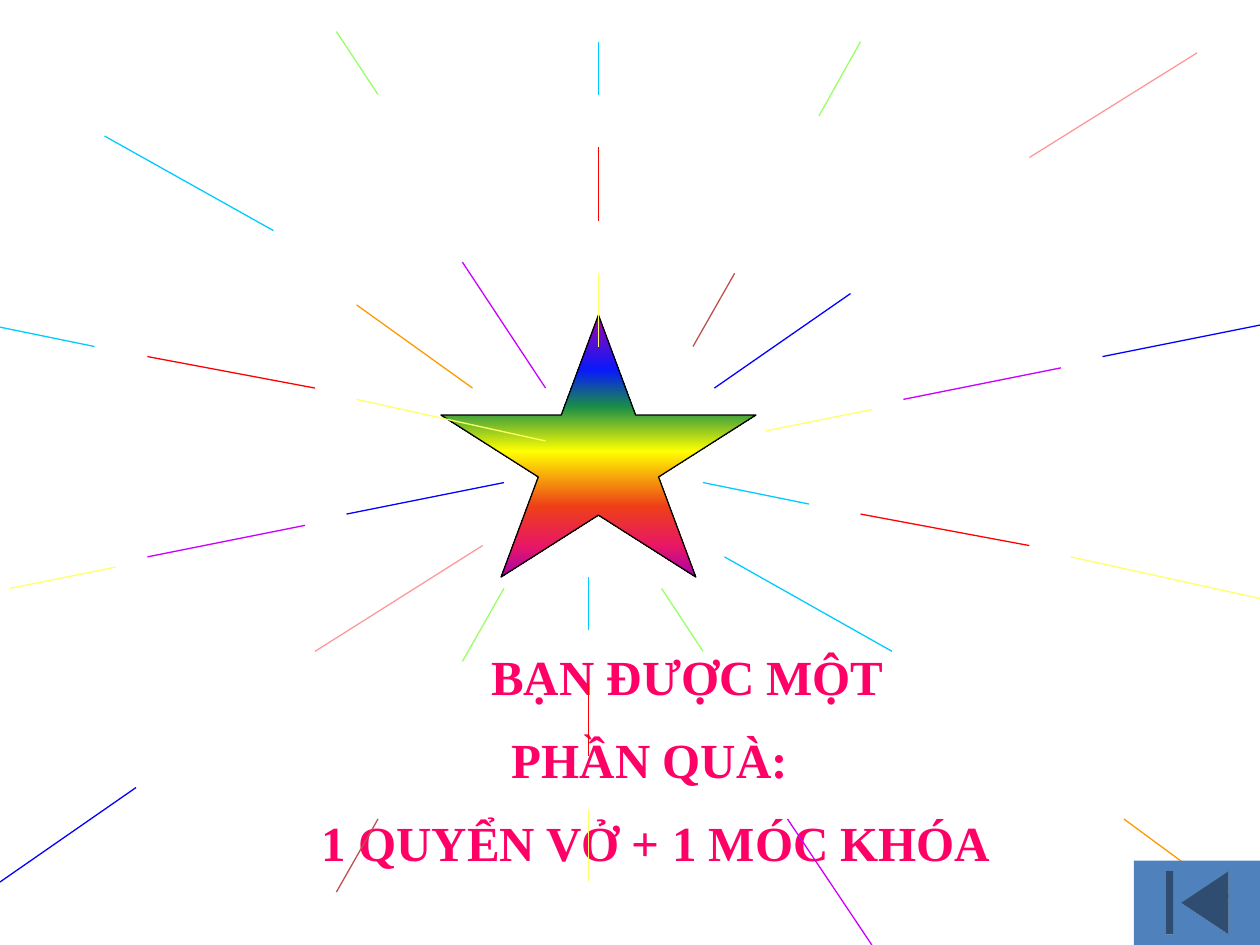
from lxml import etree
from pptx import Presentation
from pptx import util as u
from pptx.dml.color import RGBColor
from pptx.enum import shapes, text
from pptx.oxml import ns

PINK = RGBColor(0xFF, 0x00, 0x66)
BLACK = RGBColor(0x00, 0x00, 0x00)
SKY = RGBColor(0x00, 0xCC, 0xFF)
RED = RGBColor(0xFF, 0x00, 0x00)
YELLOW = RGBColor(0xFF, 0xFF, 0x66)
VIOLET = RGBColor(0xCC, 0x00, 0xFF)
BLUE = RGBColor(0x00, 0x00, 0xFF)
LIME = RGBColor(0x99, 0xFF, 0x66)
BRICK = RGBColor(0xC0, 0x50, 0x4D)
SALMON = RGBColor(0xFF, 0x99, 0x99)
ORANGE = RGBColor(0xFF, 0x99, 0x00)
STEEL = RGBColor(0x4F, 0x81, 0xBD)

RAINBOW = [
    (0, RGBColor(0xA6, 0x03, 0xAB)),
    (21, RGBColor(0x08, 0x19, 0xFB)),
    (35, RGBColor(0x1A, 0x8D, 0x48)),
    (52, RGBColor(0xFF, 0xFF, 0x00)),
    (73, RGBColor(0xEE, 0x3F, 0x17)),
    (88, RGBColor(0xE8, 0x17, 0x66)),
    (100, RGBColor(0xA6, 0x03, 0xAB)),
]

PRIZE_LINES = ["\tBẠN ĐƯỢC MỘT", "PHẦN QUÀ: ", "1 QUYỂN VỞ + 1 MÓC KHÓA"]

RAYS = {
    SKY: [(4.67, 4.58, 4.67, 5), (4.75, 0.33, 4.75, 0.75), (5.58, 3.83, 6.42, 4),
          (-0.08, 2.58, 0.75, 2.75), (5.75, 4.42, 7.08, 5.17), (0.83, 1.08, 2.17, 1.83)],
    RED: [(4.67, 5.42, 4.67, 6), (4.75, 1.17, 4.75, 1.75),
          (6.83, 4.08, 8.17, 4.33), (1.17, 2.83, 2.5, 3.08)],
    YELLOW: [(4.67, 6.42, 4.67, 7), (4.75, 2.17, 4.75, 2.75), (8.5, 4.42, 10, 4.75),
             (2.83, 3.17, 4.33, 3.5), (6.08, 3.42, 6.92, 3.25), (0.08, 4.67, 0.92, 4.5)],
    VIOLET: [(7.17, 3.17, 8.42, 2.92), (1.17, 4.42, 2.42, 4.17),
             (6.25, 6.5, 6.92, 7.5), (3.67, 2.08, 4.33, 3.08)],
    BLUE: [(8.75, 2.83, 10, 2.58), (2.75, 4.08, 4, 3.83),
           (1.08, 6.25, 0, 7), (6.75, 2.33, 5.67, 3.08)],
    LIME: [(4, 4.67, 3.67, 5.25), (6.83, 0.33, 6.5, 0.92),
           (5.25, 4.67, 5.58, 5.17), (2.67, 0.25, 3, 0.75)],
    BRICK: [(3, 6.5, 2.67, 7.08), (5.83, 2.17, 5.5, 2.75)],
    SALMON: [(3.83, 4.33, 2.5, 5.17), (9.5, 0.42, 8.17, 1.25)],
    ORANGE: [(2.83, 2.42, 3.75, 3.08), (8.92, 6.5, 9.83, 7.17)],
}


def add_prize_text(slide, left, top, width, height):
    """Write the centred prize announcement in the given box."""
    prize = slide.shapes.add_textbox(*map(u.Inches, (left, top, width, height)))
    frame = prize.text_frame
    frame.word_wrap = True
    frame.auto_size = text.MSO_AUTO_SIZE.SHAPE_TO_FIT_TEXT
    frame.text = "\n".join(PRIZE_LINES)
    for line in frame.paragraphs:
        line.alignment = text.PP_ALIGN.CENTER
        spacing = etree.SubElement(line._p.get_or_add_pPr(), ns.qn("a:spcBef"))
        etree.SubElement(spacing, ns.qn("a:spcPct"), val="50000")
        for run in line.runs:
            run.font.name = "Times New Roman"
            run.font.size = u.Pt(28)
            run.font.bold = True
            run.font.color.rgb = PINK


def add_rainbow_star(slide, left, top, width, height):
    """Draw the star with its top-to-bottom rainbow in the given box."""
    star = slide.shapes.add_shape(
        shapes.MSO_SHAPE.STAR_5_POINT, *map(u.Inches, (left, top, width, height)))
    star.shadow.inherit = False
    star.line.color.rgb = BLACK
    star.line.width = u.Pt(0.75)
    star.fill.gradient()
    gradient = star._element.spPr.find(ns.qn("a:gradFill"))
    stops = gradient.find(ns.qn("a:gsLst"))
    for stop in list(stops):
        stops.remove(stop)
    for percent, color in RAINBOW:
        stop = etree.SubElement(stops, ns.qn("a:gs"), pos=str(percent * 1000))
        etree.SubElement(stop, ns.qn("a:srgbClr"), val=str(color))
    gradient.find(ns.qn("a:lin")).set("ang", "5400000")


def add_rays(slide, left, top):
    """Scatter the coloured rays from the given corner."""
    for color, segments in RAYS.items():
        for x1, y1, x2, y2 in segments:
            ends = (left + x1, top + y1, left + x2, top + y2)
            ray = slide.shapes.add_connector(
                shapes.MSO_CONNECTOR.STRAIGHT, *map(u.Inches, ends))
            ray.line.color.rgb = color
            ray.line.width = u.Pt(0.75)
            etree.SubElement(ray._element.spPr, ns.qn("a:effectLst"))


def add_return_button(slide, left, top, width, height):
    """Place the back-to-beginning button in the given box."""
    button = slide.shapes.add_shape(
        shapes.MSO_SHAPE.ACTION_BUTTON_BEGINNING,
        *map(u.Inches, (left, top, width, height)))
    button.shadow.inherit = False
    button.fill.solid()
    button.fill.fore_color.rgb = STEEL
    button.line.fill.background()


def main():
    """Build and save the prize slide."""
    deck = Presentation()
    deck.slide_width = u.Inches(10)
    deck.slide_height = u.Inches(7.5)
    slide = deck.slides.add_slide(deck.slide_layouts[6])
    add_prize_text(slide, 1.58, 5.08, 7.25, 1.98)
    add_rainbow_star(slide, 3.5, 2.5, 2.5, 2.08)
    add_rays(slide, 0, 0)
    add_return_button(slide, 9, 6.83, 1, 0.67)
    deck.save("out.pptx")


if __name__ == "__main__":
    main()
